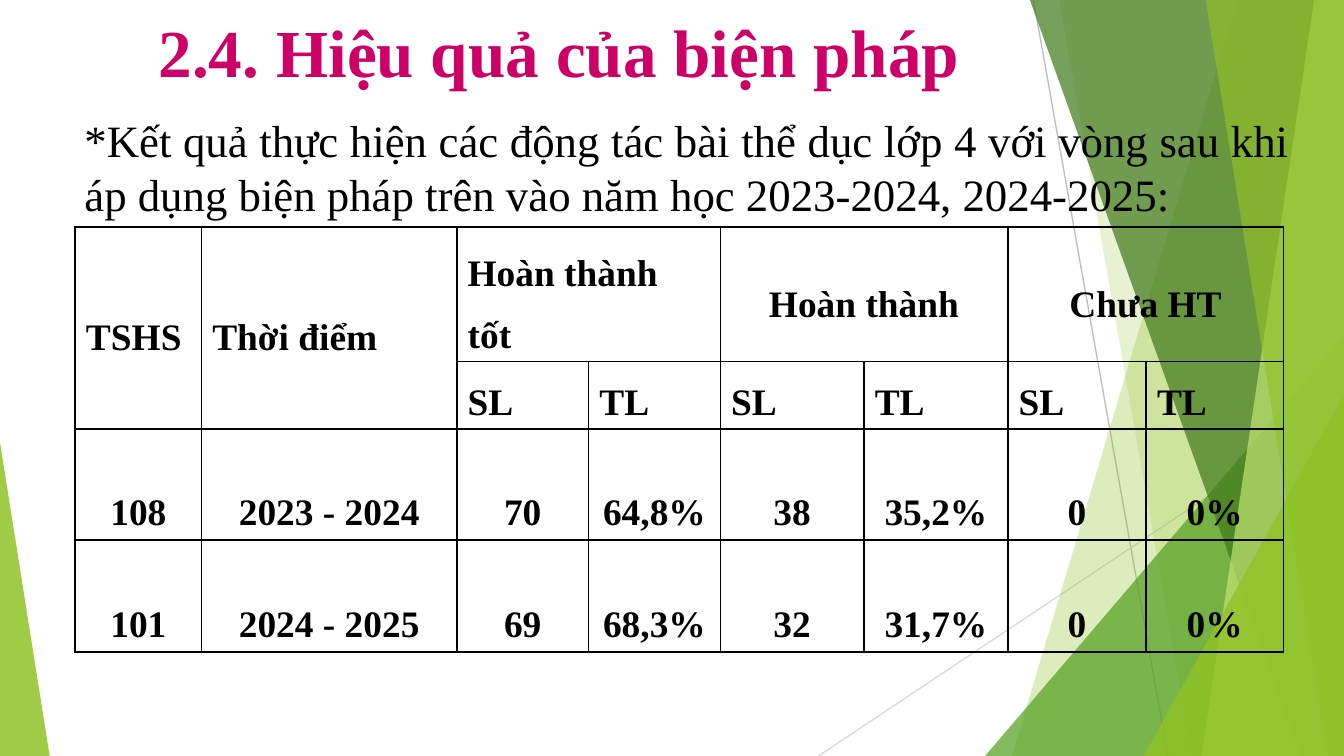
from dataclasses import dataclass

from lxml.etree import SubElement
from pptx import Presentation
from pptx.dml.color import RGBColor
from pptx.enum.shapes import MSO_CONNECTOR, MSO_SHAPE
from pptx.enum.text import MSO_ANCHOR, MSO_AUTO_SIZE, PP_ALIGN
from pptx.oxml.ns import qn
from pptx.util import Inches, Pt

COLORS = {
    "lime": "90C226", "green": "54A021", "dark": "3F7819", "pale": "C0E474",
    "gray": "BFBFBF", "light": "D9D9D9", "pink": "CC0066", "black": "000000",
}
WIDTH, TOP = 10, -0.01
HEIGHT = WIDTH * 9 / 16
FONT = "Times New Roman"
TITLE = {"name": FONT, "size": Pt(36), "bold": True}
BODY = {"name": FONT, "size": Pt(24), "bold": False}
CELL = {"name": FONT, "size": Pt(20), "bold": True}
COLS = (0.94, 1.9, 0.98, 0.98, 1.07, 1.07, 1.03, 1.02)
ROWS = (1, 0.5, 0.83, 0.83)
HEADS = ("TSHS", "Thời điểm", "Hoàn thành tốt", "", "Hoàn thành", "", "Chưa HT", "")
DATA = (
    HEADS,
    ("", "") + ("SL", "TL") * 3,
    ("108", "2023 - 2024", "70", "64,8%", "38", "35,2%", "0", "0%"),
    ("101", "2024 - 2025", "69", "68,3%", "32", "31,7%", "0", "0%"),
)
MERGES = (
    ((0, 0), (1, 0)), ((0, 1), (1, 1)),
    ((0, 2), (0, 3)), ((0, 4), (0, 5)), ((0, 6), (0, 7)),
)


@dataclass
class Ray:
    start: tuple
    end: tuple
    color: str


@dataclass
class Band:
    top: float
    base: float
    color: str
    alpha: int


@dataclass
class Wedge:
    left: float
    top: float
    width: float
    peak: int
    color: str
    alpha: int


DECOR = (
    Ray((7.69, 0), (8.69, HEIGHT), "gray"),
    Ray((WIDTH, 3.02), (6.09, HEIGHT), "light"),
    Band(9.21, 7.53, "lime", 30),
    Band(7.88, 8.87, "lime", 20),
    Wedge(7.33, 2.5, 2.67, 1, "green", 72),
    Band(7.66, 9.68, "dark", 70),
    Band(9.78, 8.94, "pale", 70),
    Band(8.97, 9.88, "lime", 65),
    Wedge(8.51, 2.94, 1.49, 1, "lime", 80),
    Wedge(0, 3.29, 0.37, 0, "lime", 85),
)


def shade(name: str) -> RGBColor:
    """Return the named colour."""
    return RGBColor.from_string(COLORS[name])


def paint(shape, color: str, alpha: int) -> None:
    """Fill a shape with a see-through colour."""
    shape.shadow.inherit = False
    shape.line.fill.background()
    shape.fill.solid()
    shape.fill.fore_color.rgb = shade(color)
    tint = shape._element.spPr.find(qn("a:solidFill")).find(qn("a:srgbClr"))
    SubElement(tint, qn("a:alpha"), val=str(alpha * 1000))


def draw(shapes, item) -> None:
    """Draw one part of the backdrop."""
    if isinstance(item, Ray):
        ends = [Inches(n) for n in item.start + item.end]
        line = shapes.add_connector(MSO_CONNECTOR.STRAIGHT, *ends)
        line.line.color.rgb = shade(item.color)
        line.line.width = Pt(0.75)
        SubElement(line._element.spPr, qn("a:effectLst"))
        return
    if isinstance(item, Band):
        points = [(Inches(x), Inches(y)) for x, y in (
            (item.top, TOP), (WIDTH, TOP), (WIDTH, HEIGHT), (item.base, HEIGHT))]
        pen = shapes.build_freeform(*points[0])
        pen.add_line_segments(points[1:], close=True)
        shape = pen.convert_to_shape()
    else:
        shape = shapes.add_shape(
            MSO_SHAPE.ISOSCELES_TRIANGLE, Inches(item.left), Inches(item.top),
            Inches(item.width), Inches(HEIGHT - item.top))
        shape.adjustments[0] = item.peak
    paint(shape, item.color, item.alpha)


def write(frame, text: str, style: dict, color: str, align: PP_ALIGN) -> None:
    """Write one styled paragraph."""
    para = frame.paragraphs[0]
    para.alignment = align
    run = para.add_run()
    run.text = text
    for name, value in style.items():
        setattr(run.font, name, value)
    run.font.color.rgb = shade(color)


def frame_cell(cell) -> None:
    """Give a cell thin borders and no fill."""
    props = cell._tc.get_or_add_tcPr()
    for side in "LRTB":
        edge = SubElement(props, qn(f"a:ln{side}"), w=str(Pt(1)))
        fill = SubElement(edge, qn("a:solidFill"))
        SubElement(fill, qn("a:srgbClr"), val=COLORS["black"])
    cell.fill.background()


def add_grid(shapes) -> None:
    """Add the table of results."""
    grid = shapes.add_table(
        len(ROWS), len(COLS), Inches(0.56), Inches(1.69),
        Inches(sum(COLS)), Inches(sum(ROWS))).table
    grid.first_row = grid.horz_banding = False
    for col, width in zip(grid.columns, COLS):
        col.width = Inches(width)
    for row, height in zip(grid.rows, ROWS):
        row.height = Inches(height)
    for first, last in MERGES:
        grid.cell(*first).merge(grid.cell(*last))
    for r, texts in enumerate(DATA):
        for c, text in enumerate(texts):
            cell = grid.cell(r, c)
            frame_cell(cell)
            anchor = (MSO_ANCHOR.MIDDLE, MSO_ANCHOR.TOP, MSO_ANCHOR.BOTTOM)[min(r, 2)]
            form = {
                "margin_left": Inches(0.08), "margin_right": Inches(0.08),
                "margin_top": 0, "margin_bottom": Inches(0.05 if r > 1 else 0),
                "vertical_anchor": anchor,
            }
            for name, value in form.items():
                setattr(cell, name, value)
            if text:
                mid = r > 1 or (r == 0 and c > 3)
                align = PP_ALIGN.CENTER if mid else PP_ALIGN.LEFT
                write(cell.text_frame, text, CELL, "black", align)
                cell.text_frame.paragraphs[0].line_spacing = 1.5


def main() -> None:
    """Build the slide and save it."""
    deck = Presentation()
    deck.slide_width, deck.slide_height = Inches(WIDTH), Inches(HEIGHT)
    slide = deck.slides.add_slide(deck.slide_layouts[5])
    shapes = slide.shapes
    for item in DECOR:
        draw(shapes, item)

    title = shapes.title
    title.left, title.top = Inches(1.05), Inches(0.02)
    title.width, title.height = Inches(6.22), Inches(0.71)
    title.text_frame.word_wrap = False
    title.text_frame.auto_size = MSO_AUTO_SIZE.NONE
    title.text_frame.vertical_anchor = MSO_ANCHOR.MIDDLE
    write(title.text_frame, "2.4. Hiệu quả của biện pháp", TITLE, "pink", PP_ALIGN.CENTER)

    add_grid(shapes)
    note = shapes.add_textbox(Inches(0.53), Inches(0.79), Inches(9.16), Inches(0.9))
    note.text_frame.word_wrap = True
    write(note.text_frame,
          "*Kết quả thực hiện các động tác bài thể dục lớp 4 với vòng sau khi "
          "áp dụng biện pháp trên vào năm học 2023-2024, 2024-2025:",
          BODY, "black", PP_ALIGN.JUSTIFY)
    deck.save("out.pptx")


if __name__ == "__main__":
    main()
